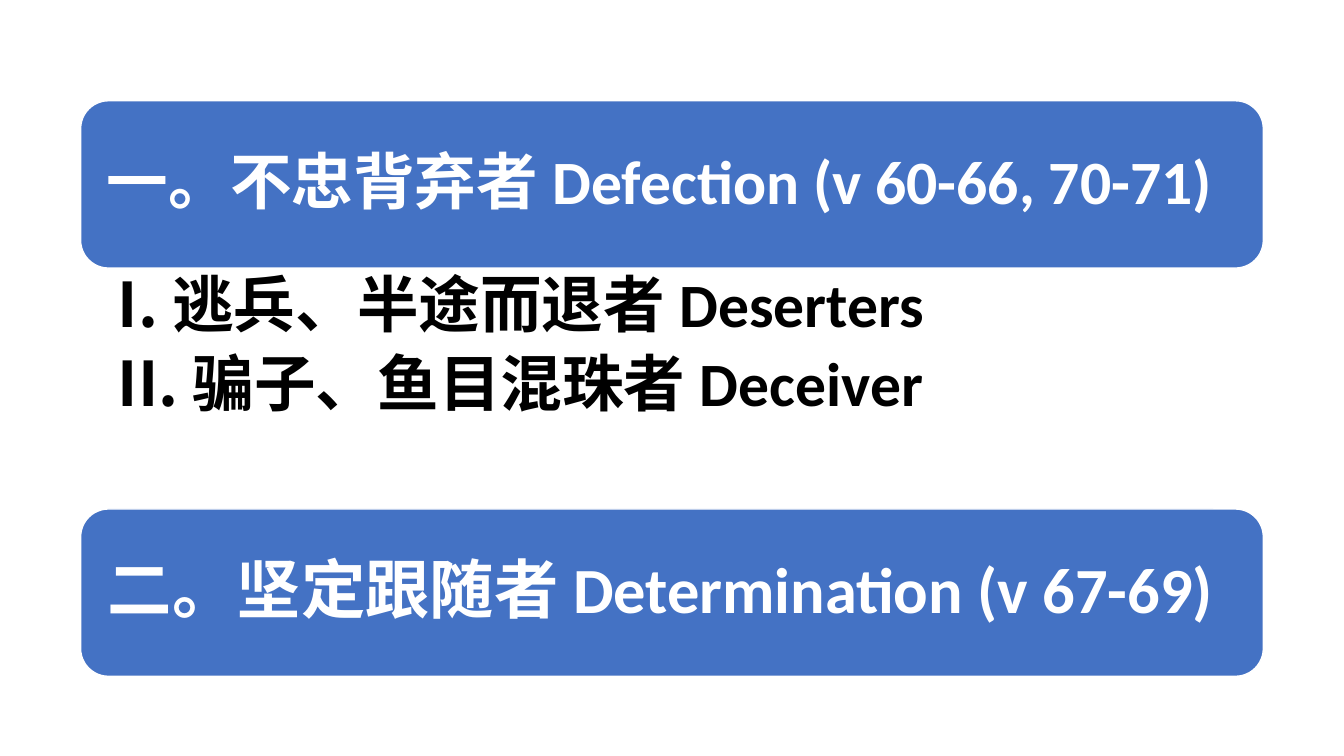
"""Build the outline slide: two heading bars and a numbered list between them."""
import pptx
import pptx.dml.color
import pptx.enum.shapes
import pptx.enum.text
import pptx.oxml.ns
import pptx.util
from lxml import etree

Inches = pptx.util.Inches
WHITE = pptx.dml.color.RGBColor(0xFF, 0xFF, 0xFF)
BLACK = pptx.dml.color.RGBColor(0x00, 0x00, 0x00)
BLUE = pptx.dml.color.RGBColor(0x44, 0x72, 0xC4)

SLIDE_WIDTH, SLIDE_HEIGHT = 13.33, 7.5
LEFT, WIDTH = 0.06 * SLIDE_WIDTH, 0.88 * SLIDE_WIDTH
TOP, BAR_HEIGHT, LIST_HEIGHT = 1, 1.66, 2.39
BAR_INSET = 0.08


def place(shape, left, top, width, height):
    """Move and size a shape, in inches."""
    shape.left, shape.top = Inches(left), Inches(top)
    shape.width, shape.height = Inches(width), Inches(height)


def write(shape, lines, size, color, margins, anchor, space_after=0, numbered=False):
    """Write lines of text into a shape with the given format."""
    frame = shape.text_frame
    frame.word_wrap = True
    frame.auto_size = pptx.enum.text.MSO_AUTO_SIZE.NONE
    frame.vertical_anchor = anchor
    frame.margin_left, frame.margin_top, frame.margin_right, frame.margin_bottom = map(Inches, margins)
    for index, line in enumerate(lines):
        paragraph = frame.add_paragraph() if index else frame.paragraphs[0]
        paragraph.alignment = pptx.enum.text.PP_ALIGN.LEFT
        paragraph.line_spacing = 0.9
        paragraph.space_before = pptx.util.Pt(0)
        paragraph.space_after = pptx.util.Pt(space_after)
        run = paragraph.add_run()
        run.text = line
        run.font.name = "Calibri"
        run.font.size = pptx.util.Pt(size)
        run.font.bold = True
        run.font.color.rgb = color
        if numbered:
            paragraph.level = 1
            properties = paragraph._p.get_or_add_pPr()
            properties.set("marL", str(Inches(0.31)))
            properties.set("indent", str(Inches(-0.31)))
            etree.SubElement(properties, pptx.oxml.ns.qn("a:buFont"), typeface="+mj-lt")
            etree.SubElement(properties, pptx.oxml.ns.qn("a:buAutoNum"), type="romanUcPeriod")


presentation = pptx.Presentation()
presentation.slide_width = Inches(SLIDE_WIDTH)
presentation.slide_height = Inches(SLIDE_HEIGHT)
slide = presentation.slides.add_slide(presentation.slide_layouts[1])
title, points = slide.placeholders

place(points, LEFT, TOP + BAR_HEIGHT, WIDTH, LIST_HEIGHT)
write(
    points,
    [" 逃兵、半途而退者 Deserters", " 骗子、鱼目混珠者 Deceiver"],
    size=44,
    color=BLACK,
    margins=(0.37, 0.06, 0.34, 0.06),
    anchor=pptx.enum.text.MSO_ANCHOR.TOP,
    space_after=8.8,
    numbered=True,
)

second_heading = slide.shapes.add_textbox(0, 0, 0, 0)
headings = [
    (title, "一。不忠背弃者 Defection (v 60-66, 70-71)", 44, 0.18),
    (second_heading, "二。坚定跟随者 Determination (v 67-69)", 46, 0.19),
]
for row, (heading, line, size, margin) in enumerate(headings):
    top = TOP + row * (BAR_HEIGHT + LIST_HEIGHT)
    bar = slide.shapes.add_shape(
        pptx.enum.shapes.MSO_SHAPE.ROUNDED_RECTANGLE,
        Inches(LEFT), Inches(top), Inches(WIDTH), Inches(BAR_HEIGHT),
    )
    bar.shadow.inherit = False
    bar.fill.solid()
    bar.fill.fore_color.rgb = BLUE
    bar.line.color.rgb = WHITE
    bar.line.width = pptx.util.Pt(1)
    bar.element.addnext(heading.element)
    place(heading, LEFT + BAR_INSET, top + BAR_INSET, WIDTH - 2 * BAR_INSET, BAR_HEIGHT - 2 * BAR_INSET)
    write(
        heading,
        [line],
        size=size,
        color=WHITE,
        margins=(margin,) * 4,
        anchor=pptx.enum.text.MSO_ANCHOR.MIDDLE,
    )

presentation.save("out.pptx")
